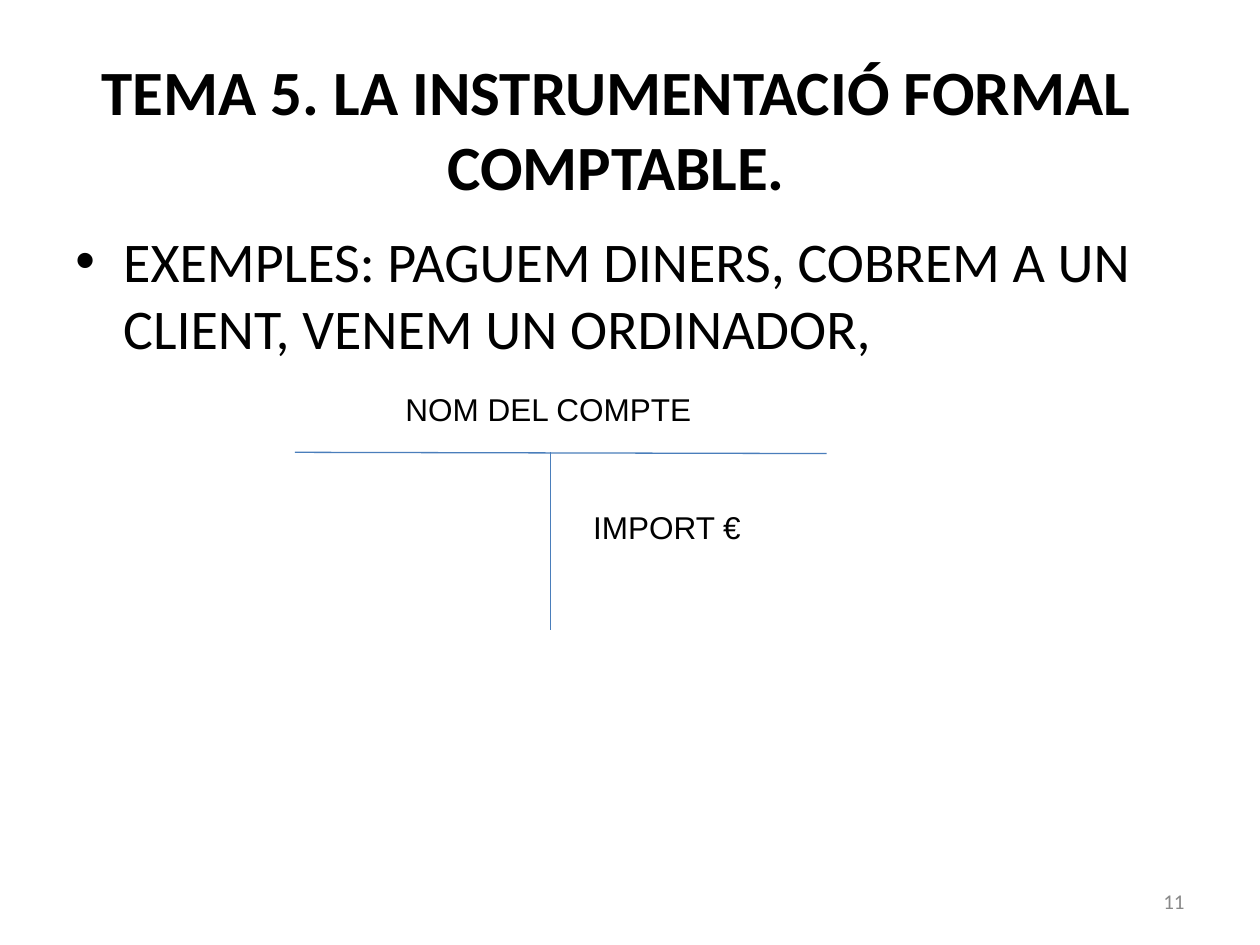
from lxml import etree
from pptx import Presentation
from pptx.dml.color import RGBColor
from pptx.enum.shapes import MSO_CONNECTOR
from pptx.enum.text import MSO_ANCHOR, PP_ALIGN
from pptx.oxml.ns import qn
from pptx.util import Inches, Pt

STRAIGHT = MSO_CONNECTOR.STRAIGHT
TOP, MIDDLE = MSO_ANCHOR.TOP, MSO_ANCHOR.MIDDLE
LEFT, CENTER, RIGHT = PP_ALIGN.LEFT, PP_ALIGN.CENTER, PP_ALIGN.RIGHT


def color(hex_value):
    return RGBColor.from_string(hex_value)


class AccountSlide:
    heading_font = "Calibri"
    label_font = "Arial"
    ink = "000000"
    muted = "898989"
    rule = "4A7EBB"

    def __init__(self, presentation):
        self.slide = presentation.slides.add_slide(presentation.slide_layouts[6])

    def text(self, content, left, top, width, height, size, font=heading_font,
             fill=ink, bold=False, align=LEFT, anchor=TOP):
        box = self.slide.shapes.add_textbox(
            Inches(left), Inches(top), Inches(width), Inches(height))
        frame = box.text_frame
        frame.word_wrap = True
        frame.vertical_anchor = anchor
        frame.text = content
        paragraph = frame.paragraphs[0]
        paragraph.alignment = align
        run_font = paragraph.runs[0].font
        run_font.name = font
        run_font.size = Pt(size)
        run_font.bold = bold
        run_font.color.rgb = color(fill)
        return paragraph

    def bullet(self, content, left, top, width, height, size, indent=0.38):
        paragraph = self.text(content, left, top, width, height, size)
        properties = paragraph._p.get_or_add_pPr()
        properties.set("marL", str(Inches(indent)))
        properties.set("indent", str(-Inches(indent)))
        etree.SubElement(properties, qn("a:buFont"), typeface="Arial")
        etree.SubElement(properties, qn("a:buChar"), char="•")

    def label(self, content, left, top, width):
        self.text(content, left, top, width, 0.4, 18, font=self.label_font)

    def line(self, x1, y1, x2, y2):
        connector = self.slide.shapes.add_connector(
            STRAIGHT, Inches(x1), Inches(y1), Inches(x2), Inches(y2))
        connector.line.color.rgb = color(self.rule)
        connector.line.width = Pt(0.75)
        etree.SubElement(connector._element.spPr, qn("a:effectLst"))


def main():
    presentation = Presentation()
    presentation.slide_width = Inches(10)
    presentation.slide_height = Inches(7.5)
    page = AccountSlide(presentation)

    # Title and examples
    page.text("TEMA 5. LA INSTRUMENTACIÓ FORMAL COMPTABLE.",
              0.39, 0.39, 9, 1.25, 36, bold=True, align=CENTER, anchor=MIDDLE)
    page.bullet("EXEMPLES: PAGUEM DINERS, COBREM A UN CLIENT, VENEM UN ORDINADOR,",
                0.5, 1.75, 9, 4.95, 32)

    # T-account
    bar_top, stem_x = 3.59, 4.37
    page.line(2.34, bar_top, 6.56, bar_top + 0.01)
    page.line(stem_x, bar_top, stem_x, 5)
    page.label("NOM DEL COMPTE", 3.12, 3.05, 2.66)
    page.label("IMPORT €", 4.61, 3.98, 1.64)

    # Page number
    page.text("11", 7.17, 6.95, 2.33, 0.4, 12, fill=page.muted,
              align=RIGHT, anchor=MIDDLE)

    presentation.save("out.pptx")


if __name__ == "__main__":
    main()
